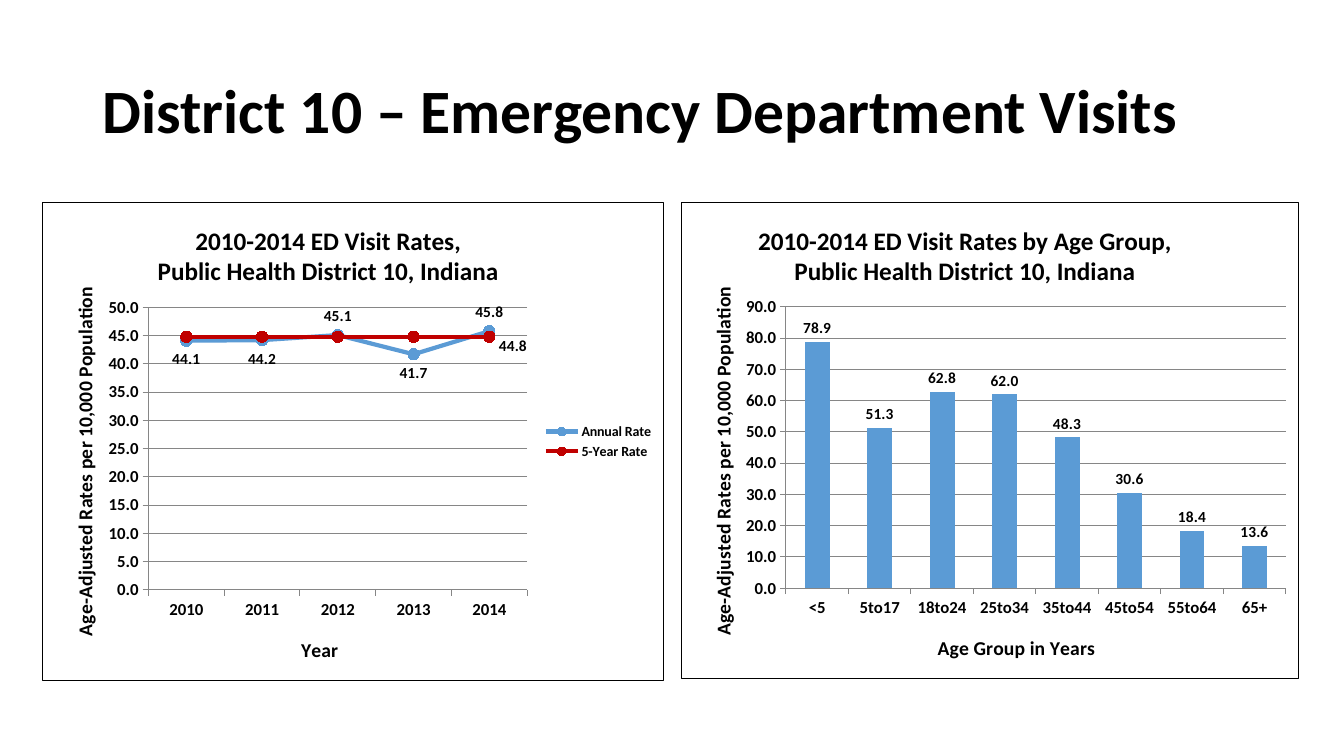
from lxml import etree
from pptx import Presentation
from pptx.chart.data import CategoryChartData
from pptx.dml.color import RGBColor
from pptx.enum.chart import (XL_CHART_TYPE, XL_LABEL_POSITION, XL_LEGEND_POSITION,
                             XL_MARKER_STYLE, XL_TICK_MARK)
from pptx.enum.text import MSO_ANCHOR, MSO_AUTO_SIZE, PP_ALIGN
from pptx.oxml import parse_xml
from pptx.oxml.ns import nsdecls, qn
from pptx.util import Inches, Pt

LINE, COLUMN = XL_CHART_TYPE.LINE_MARKERS, XL_CHART_TYPE.COLUMN_CLUSTERED
ABOVE, BELOW = XL_LABEL_POSITION.ABOVE, XL_LABEL_POSITION.BELOW
RIGHT, OUTSIDE = XL_LABEL_POSITION.RIGHT, XL_LABEL_POSITION.OUTSIDE_END
COLORS = {"text": "000000", "annual": "5B9BD5", "five_year": "C00000",
          "grid": "868686", "paper": "FFFFFF"}
FONT = "Calibri"
RATE_TITLE = "Age-Adjusted Rates per 10,000 Population"
DISTRICT = "Public Health District 10, Indiana"


def rgb(name):
    return RGBColor.from_string(COLORS[name])


def style_font(font, size):
    font.name, font.size, font.bold = FONT, Pt(size), True
    font.color.rgb = rgb("text")


def set_layout(parent, index, values, inner=False):
    """Put a manual chart layout into parent; values are fractions of the chart."""
    for old in parent.findall(qn("c:layout")):
        parent.remove(old)
    layout = parse_xml(f"<c:layout {nsdecls('c')}><c:manualLayout/></c:layout>")
    settings = [("layoutTarget", "inner")] if inner else []
    if parent.tag != qn("c:dLbl"):
        settings += [("xMode", "edge"), ("yMode", "edge")]
    settings += zip("xywh", values)
    for tag, value in settings:
        etree.SubElement(layout[0], qn(f"c:{tag}")).set("val", str(value))
    parent.insert(index, layout)


def write_title(owner, lines, size, place):
    """Title a chart or an axis, one paragraph per line."""
    title = owner.axis_title if hasattr(owner, "axis_title") else owner.chart_title
    frame = title.text_frame
    for number, line in enumerate(lines):
        para = frame.add_paragraph() if number else frame.paragraphs[0]
        span = para.add_run()
        span.text = line
        style_font(span.font, size)
    set_layout(title._element, 1, place)


def style_axis(axis, title, place):
    axis.major_tick_mark = XL_TICK_MARK.OUTSIDE
    axis.minor_tick_mark = XL_TICK_MARK.NONE
    axis.format.line.color.rgb = rgb("grid")
    style_font(axis.tick_labels.font, 12)
    write_title(axis, [title], 14, place)


def add_rate_chart(page, box, kind, categories, series, titles, title_x, plot_width):
    """Add a framed chart with its titles and axes to the given box."""
    data = CategoryChartData(number_format="0.0")
    data.categories = categories
    for name, values in series:
        data.add_series(name, values)
    chart = page.shapes.add_chart(kind, *map(Inches, box), data).chart
    chart.font.name, chart.font.size = FONT, Pt(10)
    chart.font.color.rgb = rgb("text")
    chart.has_legend = False
    chart.plots[0].vary_by_categories = False

    # Titles and axes
    heading, category_title = titles
    write_title(chart, [heading, DISTRICT], 18, (title_x, 0.04))
    style_axis(chart.category_axis, category_title, (0.41, 0.9))
    rates = chart.value_axis
    style_axis(rates, RATE_TITLE, (0.04, 0.17))
    rates.minimum_scale = 0
    rates.tick_labels.number_format = "0.0"
    rates.tick_labels.number_format_is_linked = False
    rates.has_major_gridlines = True
    rates.major_gridlines.format.line.color.rgb = rgb("grid")
    plot_area = chart._chartSpace.chart.plotArea
    set_layout(plot_area, 0, (0.17, 0.22, plot_width, 0.59), inner=True)

    # Frame
    frame = parse_xml(
        f'<c:spPr {nsdecls("c", "a")}><a:solidFill><a:srgbClr val="{COLORS["paper"]}"/>'
        f'</a:solidFill><a:ln w="{Pt(0.75)}"><a:solidFill><a:srgbClr val="{COLORS["text"]}"/>'
        '</a:solidFill></a:ln></c:spPr>')
    chart._chartSpace.find(qn("c:txPr")).addprevious(frame)
    return chart


def add_title(page, box):
    title = page.shapes.title
    title.left, title.top, title.width, title.height = map(Inches, box)
    frame = title.text_frame
    frame.auto_size, frame.vertical_anchor = MSO_AUTO_SIZE.NONE, MSO_ANCHOR.MIDDLE
    para = frame.paragraphs[0]
    para.alignment, para.line_spacing = PP_ALIGN.LEFT, 0.9
    span = para.add_run()
    span.text = "District 10 – Emergency Department Visits"
    style_font(span.font, 44)


def add_yearly_chart(page, box):
    years = ["2010", "2011", "2012", "2013", "2014"]
    series = [("Annual Rate", [44.1, 44.2, 45.1, 41.7, 45.8]),
              ("5-Year Rate", [44.8] * len(years))]
    chart = add_rate_chart(page, box, LINE, years, series,
                           ("2010-2014 ED Visit Rates,", "Year"), 0.18, 0.61)
    chart.has_legend = True
    chart.legend.position = XL_LEGEND_POSITION.RIGHT
    chart.legend.include_in_layout = False
    style_font(chart.legend.font, 10)

    # Lines, markers and point labels
    label_places = [dict(enumerate([BELOW, BELOW, ABOVE, BELOW, ABOVE])), {4: RIGHT}]
    for rate, color, places in zip(chart.series, ("annual", "five_year"), label_places):
        rate.smooth = False
        rate.format.line.color.rgb = rgb(color)
        rate.format.line.width = Pt(3)
        rate.marker.style, rate.marker.size = XL_MARKER_STYLE.CIRCLE, 8
        rate.marker.format.fill.solid()
        rate.marker.format.fill.fore_color.rgb = rgb(color)
        rate.marker.format.line.color.rgb = rgb(color)
        for index, place in places.items():
            label = rate.points[index].data_label
            style_font(label.font, 11)
            label.position = place
    # Lower the five-year label clear of its line
    set_layout(chart.series[1]._element.find(".//" + qn("c:dLbl")), 1, (0, 0.02))


def add_age_chart(page, box):
    ages = ["<5", "5to17", "18to24", "25to34", "35to44", "45to54", "55to64", "65+"]
    series = [("Series 1", [78.9, 51.3, 62.8, 62, 48.3, 30.6, 18.4, 13.6])]
    chart = add_rate_chart(page, box, COLUMN, ages, series,
                           ("2010-2014 ED Visit Rates by Age Group,", "Age Group in Years"),
                           0.12, 0.81)
    plot = chart.plots[0]
    plot.gap_width = 150
    bars = plot.series[0]
    bars.format.fill.solid()
    bars.format.fill.fore_color.rgb = rgb("annual")
    labels = bars.data_labels
    labels.show_value, labels.position = True, OUTSIDE
    labels.number_format, labels.number_format_is_linked = "0.0", False
    style_font(labels.font, 11)


def main():
    deck = Presentation()
    deck.slide_width, deck.slide_height = Inches(13.33), Inches(7.5)
    page = deck.slides.add_slide(deck.slide_layouts[5])
    add_title(page, (0.92, 0.4, 11.5, 1.45))
    add_yearly_chart(page, (0.42, 2, 6.17, 4.76))
    add_age_chart(page, (6.75, 2, 6.13, 4.74))
    deck.save("out.pptx")


if __name__ == "__main__":
    main()
